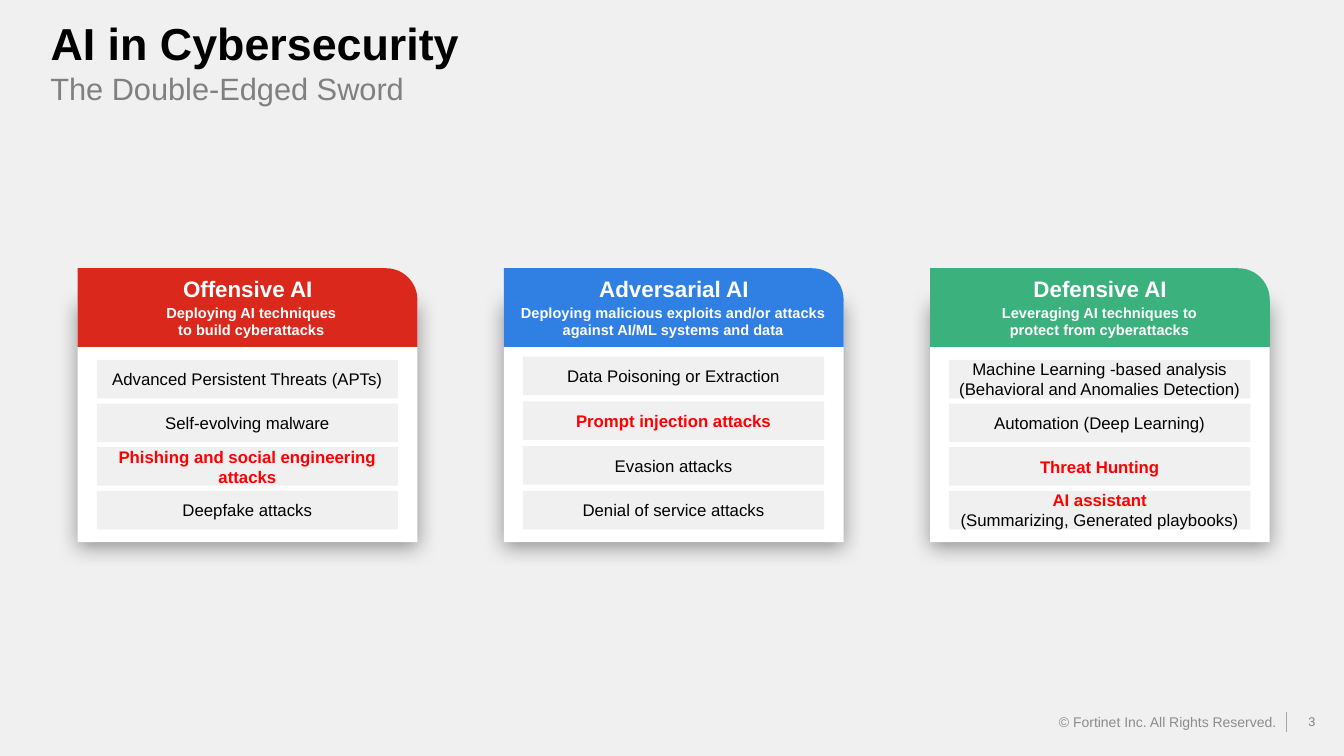
"""Builds the slide on the three faces of AI in cybersecurity."""
from dataclasses import dataclass

from lxml.etree import SubElement
from pptx import Presentation
from pptx.dml.color import RGBColor
from pptx.enum.shapes import MSO_CONNECTOR, MSO_SHAPE
from pptx.enum.text import MSO_ANCHOR, MSO_AUTO_SIZE, PP_ALIGN
from pptx.oxml.ns import qn
from pptx.util import Cm, Pt

BLACK = RGBColor(0x00, 0x00, 0x00)
WHITE = RGBColor(0xFF, 0xFF, 0xFF)
PALE = RGBColor(0xF0, 0xF0, 0xF0)
GREY = RGBColor(0x80, 0x80, 0x80)
FOOTER_GREY = RGBColor(0x8C, 0x8C, 0x8C)
RULE_GREY = RGBColor(0xA6, 0xA6, 0xA6)
ALERT = RGBColor(0xFF, 0x00, 0x00)
RED = RGBColor(0xDA, 0x29, 0x1C)
BLUE = RGBColor(0x30, 0x7F, 0xE2)
GREEN = RGBColor(0x3B, 0xB1, 0x7E)

CARD_LEFT, CARD_PITCH, CARD_WIDTH = 1.96, 10.74, 8.56
LAST_ROW_TOP = 12.37


@dataclass
class Card:
    """Content of one card, with the places that vary between cards."""
    heading: str
    color: RGBColor
    summary: str
    summary_left: float
    summary_width: float
    first_row_top: float
    rows: list


CARDS = [
    Card("Offensive AI", RED, "Deploying AI techniques\vto build cyberattacks",
         0.36, 8.03, 9.07,
         ["Advanced Persistent Threats (APTs)", "Self-evolving malware",
          "Phishing and social engineering attacks", "Deepfake attacks"]),
    Card("Adversarial AI", BLUE,
         "Deploying malicious exploits and/or attacks against AI/ML systems and data",
         0.25, 8.03, 8.99,
         ["Data Poisoning or Extraction", "Prompt injection attacks",
          "Evasion attacks", "Denial of service attacks"]),
    Card("Defensive AI", GREEN,
         "Leveraging AI techniques to protect from cyberattacks",
         1.12, 6.3, 9.07,
         ["Machine Learning -based analysis\n(Behavioral and Anomalies Detection)",
          "Automation (Deep Learning)", "Threat Hunting",
          "AI assistant\n(Summarizing, Generated playbooks)"]),
]
HIGHLIGHTS = {"Phishing and social engineering attacks",
              "Prompt injection attacks", "Threat Hunting", "AI assistant"}


def style(p, size, color, bold=False, align=PP_ALIGN.CENTER, spacing=None):
    """Format a whole paragraph."""
    p.alignment = align
    p.line_spacing = spacing
    p.font.name = "Arial"
    p.font.size = Pt(size)
    p.font.bold = bold
    p.font.color.rgb = color


def set_insets(tf, x, y):
    """Set the horizontal and vertical insets in centimetres."""
    tf.margin_left = tf.margin_right = Cm(x)
    tf.margin_top = tf.margin_bottom = Cm(y)


def add_text(slide, box, text, size, color, anchor=MSO_ANCHOR.TOP,
             insets=(0.25, 0.13), **options):
    """Add a one-paragraph text box and return its frame."""
    tf = slide.shapes.add_textbox(*map(Cm, box)).text_frame
    tf.word_wrap = True
    tf.vertical_anchor = anchor
    set_insets(tf, *insets)
    p = tf.paragraphs[0]
    p.text = text
    style(p, size, color, **options)
    return tf


def add_block(slide, kind, box, color):
    """Add a filled shape without outline or shadow."""
    sp = slide.shapes.add_shape(kind, *map(Cm, box))
    sp.fill.solid()
    sp.fill.fore_color.rgb = color
    sp.line.fill.background()
    sp.shadow.inherit = False
    return sp


def add_soft_shadow(sp):
    """Give a shape a blurred shadow below it."""
    effects = sp._element.spPr.find(qn("a:effectLst"))
    shadow = SubElement(effects, qn("a:outerShdw"), blurRad=str(Pt(15)),
                        dist=str(Pt(3)), dir="5400000", algn="t", rotWithShape="0")
    color = SubElement(shadow, qn("a:srgbClr"), val=str(BLACK))
    SubElement(color, qn("a:alpha"), val="40000")


def add_row(slide, left, top, text):
    """Add one grey row, with highlighted lines in bold red."""
    sp = add_block(slide, MSO_SHAPE.RECTANGLE, (left, top, 7.59, 0.97), PALE)
    tf = sp.text_frame
    tf.word_wrap = True
    tf.vertical_anchor = MSO_ANCHOR.MIDDLE
    set_insets(tf, 0, 0.08)
    tf.text = text
    for p in tf.paragraphs:
        hot = p.text in HIGHLIGHTS
        style(p, 12, ALERT if hot else BLACK, bold=hot)


def add_card(slide, left, card):
    """Add a card with its header, summary and rows."""
    body = add_block(slide, MSO_SHAPE.RECTANGLE, (left, 7.59, CARD_WIDTH, 6.07), WHITE)
    add_soft_shadow(body)
    header = add_block(slide, MSO_SHAPE.ROUND_1_RECTANGLE,
                       (left, 6.76, CARD_WIDTH, 1.98), card.color)
    header.adjustments[0] = 0.4
    add_text(slide, (left + 0.17, 6.95, 8.23, 0.74), card.heading, 16, WHITE,
             MSO_ANCHOR.MIDDLE, (0, 0), bold=True, spacing=0.9)
    pitch = (LAST_ROW_TOP - card.first_row_top) / (len(card.rows) - 1)
    for i, text in enumerate(card.rows):
        add_row(slide, left + 0.48, card.first_row_top + i * pitch, text)
    tf = add_text(slide, (left + card.summary_left, 7.52, card.summary_width, 1.12),
                  card.summary, 10.4, WHITE, insets=(0.13, 0.13), bold=True)
    tf.auto_size = MSO_AUTO_SIZE.SHAPE_TO_FIT_TEXT


def add_title(slide):
    """Fill the title placeholder and add the subtitle."""
    title = slide.shapes.title
    title.left, title.top, title.width, title.height = map(Cm, (1.02, 0.43, 29.21, 1.5))
    tf = title.text_frame
    tf.text = "AI in Cybersecurity"
    tf.vertical_anchor = MSO_ANCHOR.TOP
    tf.auto_size = MSO_AUTO_SIZE.NONE
    style(tf.paragraphs[0], 32, BLACK, bold=True, align=PP_ALIGN.LEFT, spacing=0.9)
    add_text(slide, (1.02, 1.73, 29.62, 0.66), "The Double-Edged Sword", 22, GREY,
             align=PP_ALIGN.LEFT, spacing=0.9)


def add_footer(slide):
    """Add the page number, the divider and the copyright line."""
    add_text(slide, (32.41, 17.81, 1.3, 0.76), "3", 9, GREY, MSO_ANCHOR.MIDDLE)
    line = slide.shapes.add_connector(MSO_CONNECTOR.STRAIGHT,
                                      *map(Cm, (32.41, 17.93, 32.41, 18.44)))
    line.line.color.rgb = RULE_GREY
    line.line.width = Pt(0.5)
    SubElement(line._element.spPr, qn("a:effectLst"))
    add_text(slide, (26.19, 17.68, 6.22, 1.02), "© Fortinet Inc. All Rights Reserved.",
             10, FOOTER_GREY, MSO_ANCHOR.MIDDLE, align=PP_ALIGN.RIGHT)


def main():
    """Build and save the slide."""
    prs = Presentation()
    prs.slide_width, prs.slide_height = Cm(33.87), Cm(19.05)
    slide = prs.slides.add_slide(prs.slide_layouts[5])
    slide.background.fill.solid()
    slide.background.fill.fore_color.rgb = PALE
    add_footer(slide)
    add_title(slide)
    for i, card in enumerate(CARDS):
        add_card(slide, CARD_LEFT + i * CARD_PITCH, card)
    prs.save("out.pptx")


if __name__ == "__main__":
    main()
